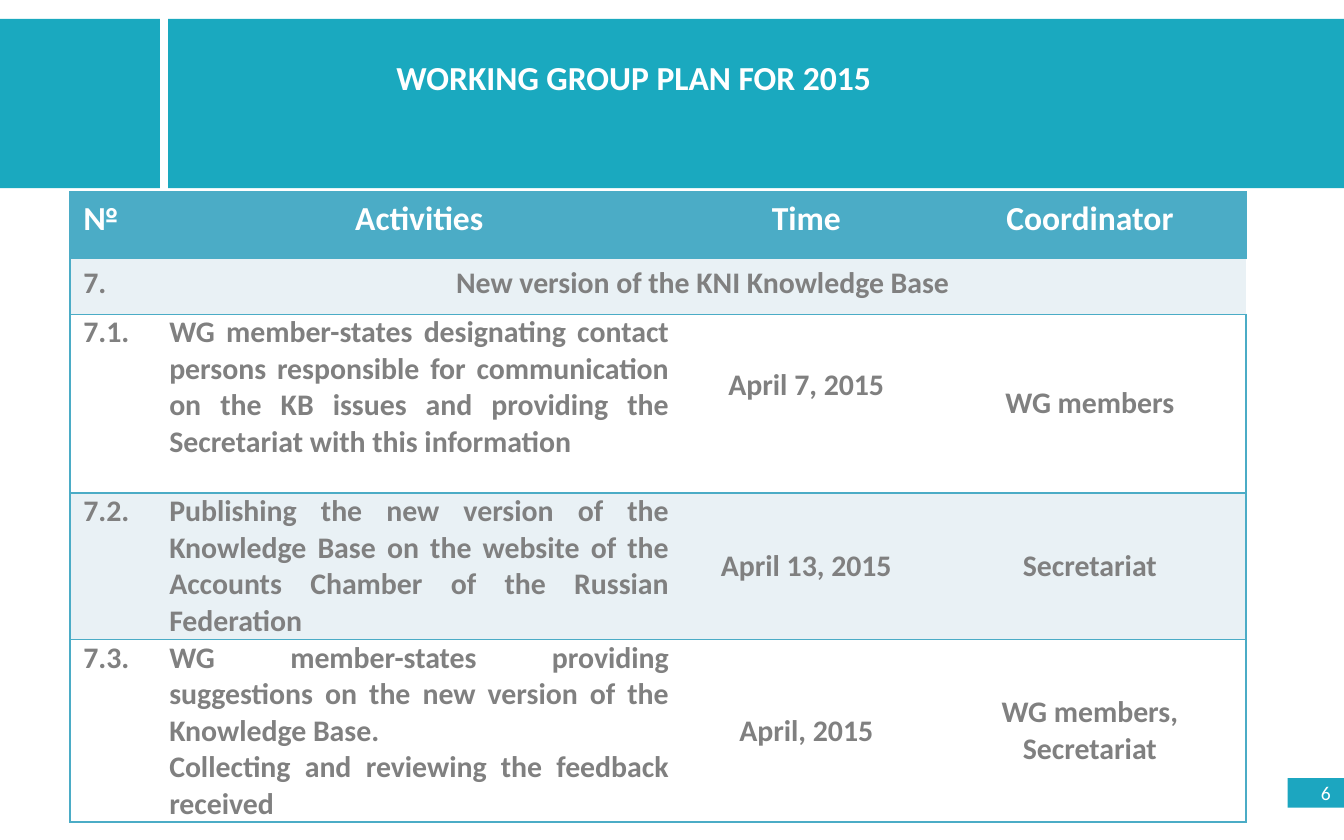
"""Build the working group plan slide with its header bands and activity table."""
from lxml.etree import SubElement
from pptx import Presentation
from pptx.dml.color import RGBColor
from pptx.enum.shapes import MSO_SHAPE
from pptx.enum.text import MSO_ANCHOR as Anchor, MSO_AUTO_SIZE as AutoSize, PP_ALIGN as Align
from pptx.oxml.ns import qn
from pptx.util import Inches, Pt

TEAL, BLUE, PALE, WHITE, GRAY = "1AA9BF", "4BACC6", "E9F1F5", "FFFFFF", "808080"


def color(value):
    return RGBColor.from_string(value)


def write(frame, text, size, font_color, align, bold=True):
    frame.text = text
    for paragraph in frame.paragraphs:
        paragraph.alignment = align
        values = {"name": "Calibri", "size": Pt(size), "bold": bold}
        for name, value in values.items():
            setattr(paragraph.font, name, value)
        paragraph.font.color.rgb = color(font_color)


presentation = Presentation()
presentation.slide_width, presentation.slide_height = Inches(10), Inches(6.25)
slide = presentation.slides.add_slide(presentation.slide_layouts[5])

bands = [
    (1.25, 0.14, 8.75, 1.26, TEAL),
    (0, 0.14, 1.19, 1.26, TEAL),
    (9.58, 5.79, 0.42, 0.22, "1CA6C0"),
]
for *box, fill in bands:
    shape = slide.shapes.add_shape(MSO_SHAPE.RECTANGLE, *map(Inches, box))
    shape.shadow.inherit = False
    shape.fill.solid()
    shape.fill.fore_color.rgb = color(fill)
    shape.line.fill.background()
page_number = shape.text_frame
page_number.vertical_anchor = Anchor.MIDDLE
page_number.margin_top = page_number.margin_bottom = 0
write(page_number, "6", 10.5, WHITE, Align.RIGHT, bold=False)

title = slide.shapes.title
placement = {"left": 2.85, "top": 0.37, "width": 3.77, "height": 0.4}
for name, value in placement.items():
    setattr(title, name, Inches(value))
title_frame = title.text_frame
title_format = {"word_wrap": False, "auto_size": AutoSize.NONE, "vertical_anchor": Anchor.TOP}
for name, value in title_format.items():
    setattr(title_frame, name, value)
write(title_frame, "WORKING GROUP PLAN FOR 2015", 18, WHITE, Align.LEFT)
slide.shapes._spTree.append(title._element)

rows = [
    ("№", "Activities", "Time", "Coordinator"),
    ("7.", "New version of the KNI Knowledge Base", "", ""),
    ("7.1.", "WG member-states designating contact persons responsible for communication "
     "on the KB issues and providing the Secretariat with this information",
     "April 7, 2015", "WG members"),
    ("7.2.", "Publishing the new version of the Knowledge Base on the website of the "
     "Accounts Chamber of the Russian Federation", "April 13, 2015", "Secretariat"),
    ("7.3.", "WG member-states providing suggestions on the new version of the Knowledge Base.\n"
     "Collecting and reviewing the feedback received",
     "April, 2015", "WG members, Secretariat"),
]
column_widths = [0.67, 3.86, 1.9, 2.32]
row_heights = [0.49, 0.42, 1.33, 1.09, 1.33]
table = slide.shapes.add_table(
    len(rows), len(column_widths), Inches(0.52), Inches(1.43),
    Inches(sum(column_widths)), Inches(sum(row_heights))).table
for column, width in zip(table.columns, column_widths):
    column.width = Inches(width)
for row, height in zip(table.rows, row_heights):
    row.height = Inches(height)
table.cell(1, 1).merge(table.cell(1, 3))

for row_index, texts in enumerate(rows):
    is_header, is_activity = row_index == 0, row_index > 1
    fill = BLUE if is_header else (PALE if row_index % 2 else WHITE)
    for column_index, text in enumerate(texts):
        cell = table.cell(row_index, column_index)
        edges = {"a:lnL": column_index == 0, "a:lnR": column_index == 3,
                 "a:lnT": True, "a:lnB": True}
        for tag, visible in edges.items():
            line = SubElement(cell._tc.get_or_add_tcPr(), qn(tag), w=str(Pt(1)))
            if visible:
                line_fill = SubElement(line, qn("a:solidFill"))
                SubElement(line_fill, qn("a:srgbClr"), val=BLUE)
            else:
                SubElement(line, qn("a:noFill"))
        cell.fill.solid()
        cell.fill.fore_color.rgb = color(fill)
        if is_activity:
            cell.margin_left = Inches(0.07 if column_index else 0.1)
            cell.margin_right = Inches(0.07)
            cell.margin_top = cell.margin_bottom = 0
            if column_index > 1:
                cell.vertical_anchor = Anchor.MIDDLE
        if column_index == 0:
            align = Align.LEFT
        elif is_activity and column_index == 1:
            align = Align.JUSTIFY
        else:
            align = Align.CENTER
        if text:
            write(cell.text_frame, text, 18 if is_header else 16,
                  WHITE if is_header else GRAY, align)
table.cell(2, 2).margin_bottom = Inches(0.27)

presentation.save("out.pptx")
